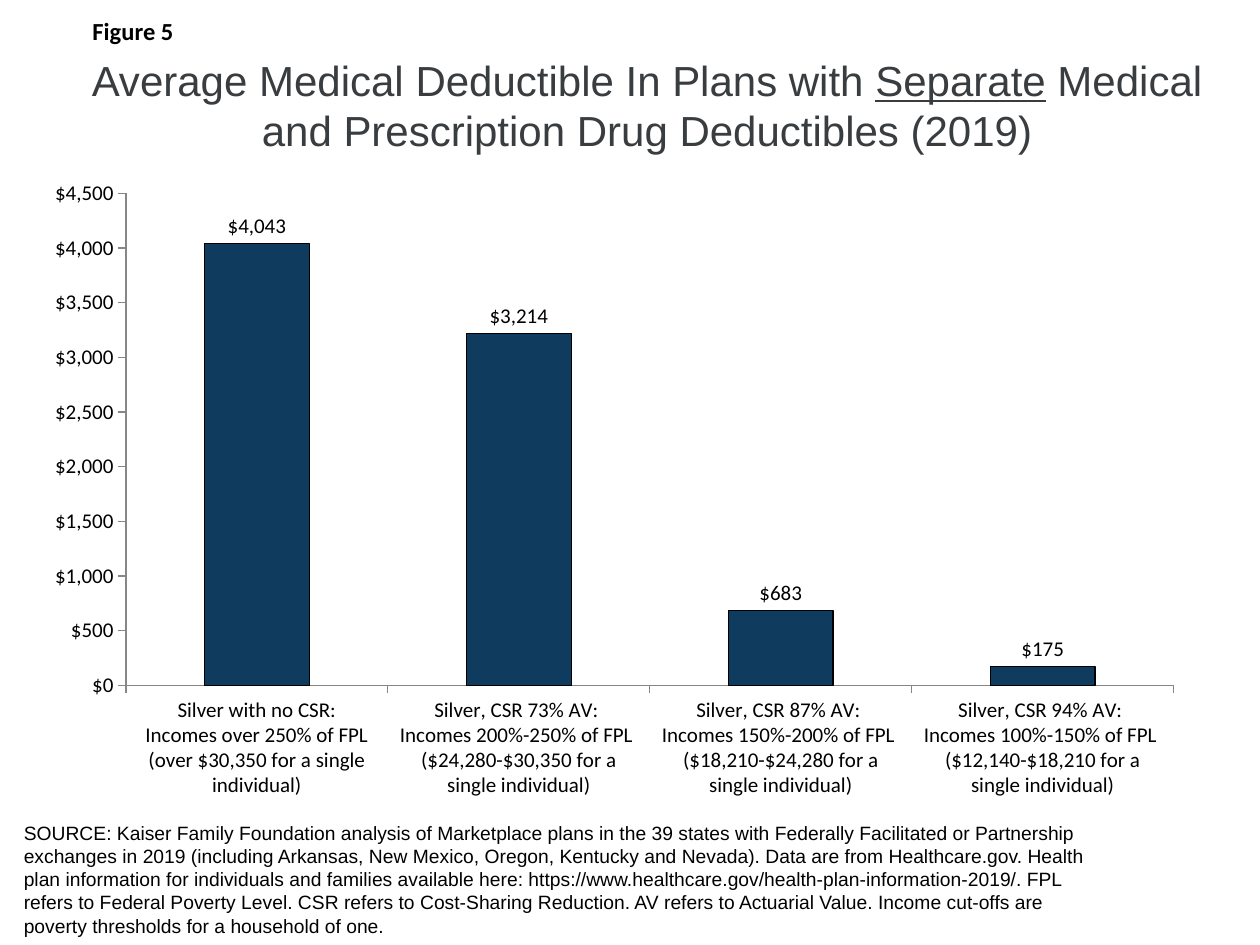
import pptx
import pptx.chart.data
import pptx.dml.color
import pptx.enum.chart
import pptx.enum.text
import pptx.oxml
import pptx.oxml.ns
import pptx.util

BLACK = pptx.dml.color.RGBColor(0x00, 0x00, 0x00)
SLATE = pptx.dml.color.RGBColor(0x39, 0x3D, 0x40)
NAVY = pptx.dml.color.RGBColor(0x0E, 0x3B, 0x5E)
AXIS_GRAY = pptx.dml.color.RGBColor(0x86, 0x86, 0x86)

WIDTH, HEIGHT = pptx.util.Inches(10), pptx.util.Inches(7.5)
DOLLARS = '"$"#,##0;[Red]"$"#,##0'
CENTER = pptx.enum.text.PP_ALIGN.CENTER

DEDUCTIBLES = [
    ("Silver with no CSR:\nIncomes over 250% of FPL\n"
     "(over $30,350 for a single individual)", 4043),
    ("Silver, CSR 73% AV: \nIncomes 200%-250% of FPL \n"
     "($24,280-$30,350 for a single individual)", 3214),
    ("Silver, CSR 87% AV: \nIncomes 150%-200% of FPL \n"
     "($18,210-$24,280 for a single individual)", 683),
    ("Silver, CSR 94% AV: \nIncomes 100%-150% of FPL \n"
     "($12,140-$18,210 for a single individual)", 175),
]
SOURCE = (
    "SOURCE: Kaiser Family Foundation analysis of Marketplace plans in the 39 states "
    "with Federally Facilitated or Partnership exchanges in 2019 (including Arkansas, "
    "New Mexico, Oregon, Kentucky and Nevada). Data are from Healthcare.gov. Health plan "
    "information for individuals and families available here: "
    "https://www.healthcare.gov/health-plan-information-2019/. FPL refers to Federal "
    "Poverty Level. CSR refers to Cost-Sharing Reduction. AV refers to Actuarial Value. "
    "Income cut-offs are poverty thresholds for a household of one."
)


def inches(*lengths):
    return [pptx.util.Inches(length) for length in lengths]


def style_font(font, size, color, name):
    font.size = pptx.util.Pt(size)
    font.color.rgb = color
    font.name = name


def add_span(para, text, size, color, name):
    span = para.add_run()
    span.text = text
    style_font(span.font, size, color, name)
    return span


def add_label(page, area, text, size, name):
    """Add a one-paragraph text box; return its paragraph and run."""
    frame = page.shapes.add_textbox(*inches(*area)).text_frame
    frame.word_wrap = True
    para = frame.paragraphs[0]
    return para, add_span(para, text, size, BLACK, name)


def fill_title(page):
    title = page.shapes.title
    title.left, title.top, title.width, title.height = inches(0.37, 0.33, 9.53, 1)
    frame = title.text_frame
    frame.auto_size = pptx.enum.text.MSO_AUTO_SIZE.NONE
    frame.vertical_anchor = pptx.enum.text.MSO_ANCHOR.MIDDLE
    para = frame.paragraphs[0]
    para.alignment = CENTER
    for text, underlined in [
        ("Average Medical Deductible In Plans with ", False),
        ("Separate", True),
        (" Medical and Prescription Drug Deductibles (2019)", False),
    ]:
        add_span(para, text, 24, SLATE, "Arial").font.underline = underlined


def style_axis(axis):
    axis.has_major_gridlines = False
    axis.major_tick_mark = pptx.enum.chart.XL_TICK_MARK.OUTSIDE
    axis.minor_tick_mark = pptx.enum.chart.XL_TICK_MARK.NONE
    axis.format.line.color.rgb = AXIS_GRAY
    axis.format.line.width = pptx.util.Pt(0.75)
    style_font(axis.tick_labels.font, 12, BLACK, "Calibri")


def place_plot(chart, x, y, w, h):
    """Fix the inner plot area, in shares of the chart's size."""
    plot_area = chart.element.chart.plotArea
    for old in plot_area.findall(pptx.oxml.ns.qn("c:layout")):
        plot_area.remove(old)
    sizes = "".join(f'<c:{tag} val="{share}"/>'
                    for tag, share in zip("xywh", (x, y, w, h)))
    plot_area.insert(0, pptx.oxml.parse_xml(
        f'<c:layout {pptx.oxml.ns.nsdecls("c")}><c:manualLayout>'
        '<c:layoutTarget val="inner"/><c:xMode val="edge"/><c:yMode val="edge"/>'
        f'{sizes}</c:manualLayout></c:layout>'))


def add_deductible_chart(page):
    data = pptx.chart.data.CategoryChartData()
    data.categories = [plan for plan, _ in DEDUCTIBLES]
    data.add_series("Series 1", [amount for _, amount in DEDUCTIBLES])
    chart = page.shapes.add_chart(
        pptx.enum.chart.XL_CHART_TYPE.COLUMN_CLUSTERED,
        *inches(0.26, 1.33, 9.24, 5.1), data).chart
    chart.has_legend = False
    chart.has_title = False
    style_font(chart.font, 16, BLACK, "Calibri")
    place_plot(chart, 0.08, 0.04, 0.9, 0.766)

    style_axis(chart.category_axis)
    amounts = chart.value_axis
    style_axis(amounts)
    amounts.minimum_scale, amounts.maximum_scale, amounts.major_unit = 0, 4500, 500
    amounts.tick_labels.number_format = DOLLARS
    amounts.tick_labels.number_format_is_linked = False

    plot = chart.plots[0]
    plot.gap_width = 150
    plot.vary_by_categories = False
    bars = plot.series[0]
    bars.format.fill.solid()
    bars.format.fill.fore_color.rgb = NAVY
    bars.format.line.color.rgb = BLACK
    bars.format.line.width = pptx.util.Pt(0.75)
    labels = bars.data_labels
    labels.show_value = True
    labels.number_format = DOLLARS
    labels.number_format_is_linked = False
    labels.position = pptx.enum.chart.XL_LABEL_POSITION.OUTSIDE_END
    style_font(labels.font, 12, BLACK, "Calibri")


def main():
    deck = pptx.Presentation()
    deck.slide_width, deck.slide_height = WIDTH, HEIGHT
    page = deck.slides.add_slide(deck.slide_layouts.get_by_name("Title Only"))
    add_label(page, (0.09, 6.47, 8.75, 1.03), SOURCE, 11, "Arial")
    add_deductible_chart(page)
    fill_title(page)
    para, span = add_label(page, (0.18, 0.08, 1.75, 0.34), "Figure 5", 14, "Calibri")
    para.alignment = CENTER
    span.font.bold = True
    deck.save("out.pptx")


if __name__ == "__main__":
    main()
